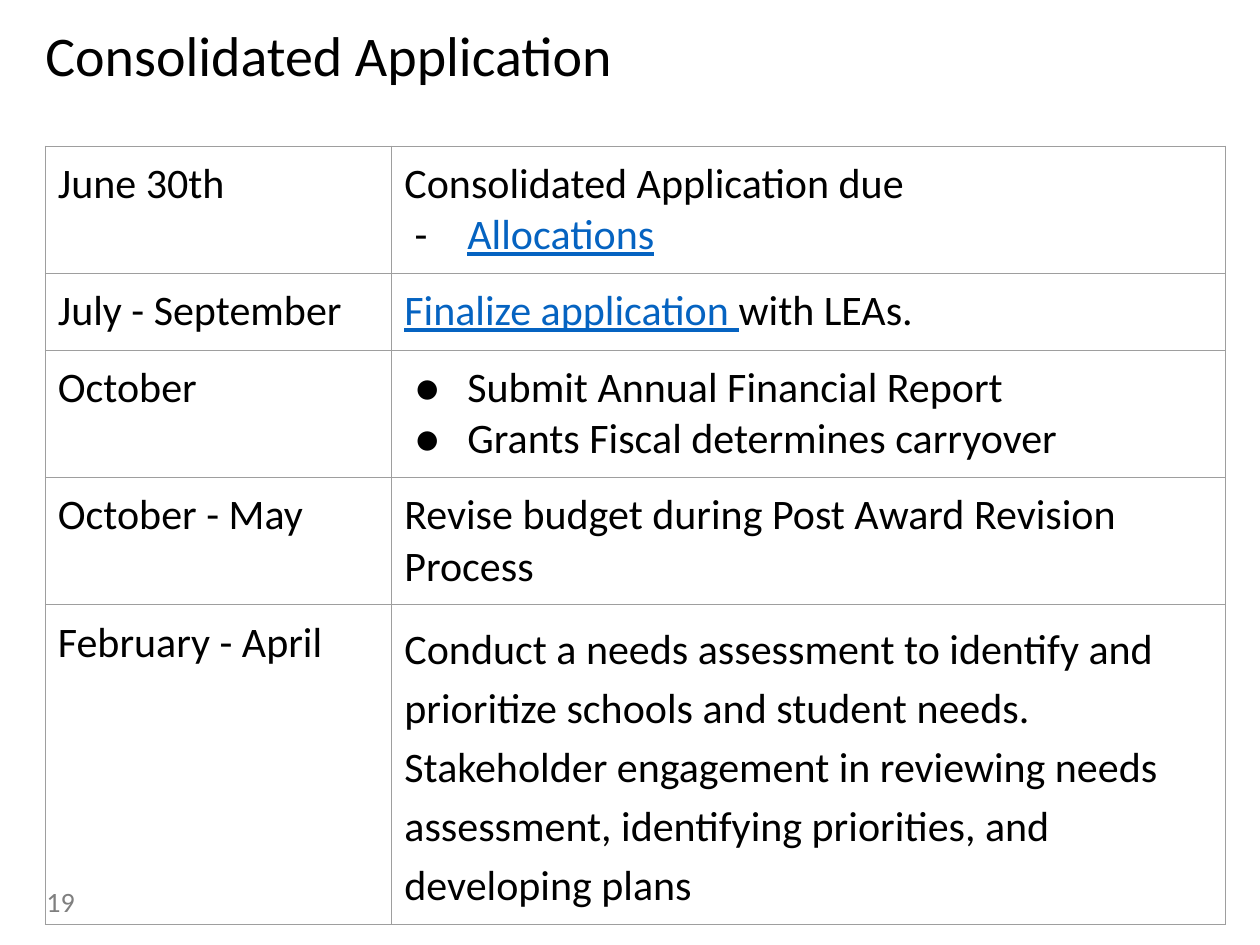
from lxml.etree import SubElement
from pptx import Presentation
from pptx.dml.color import RGBColor
from pptx.enum.text import MSO_ANCHOR, MSO_AUTO_SIZE, PP_ALIGN
from pptx.oxml import parse_xml
from pptx.oxml.ns import nsdecls, qn
from pptx.util import Inches, Pt

HUES = {"ink": "000000", "link": "0563C1", "page": "7F7F7F", "rule": "9E9E9E"}
FACE = "Calibri"
COLS = [2.75, 6.62]
# Each row: height, date, paragraphs as (bullet, line spacing, runs as (text, hue))
ROWS = [
    (1.01, "June 30th", [
        (None, None, [("Consolidated Application due", "ink")]),
        ("-", None, [("Allocations", "link")])]),
    (0.61, "July - September", [
        (None, None, [("Finalize application ", "link"), ("with LEAs.", "ink")])]),
    (1.01, "October", [
        ("●", None, [("Submit Annual Financial Report", "ink")]),
        ("●", None, [("Grants Fiscal determines carryover", "ink")])]),
    (1.01, "October - May", [
        (None, None, [("Revise budget during Post Award Revision Process", "ink")])]),
    (2.54, "February - April", [
        (None, 1.15, [("Conduct a needs assessment to identify and prioritize schools "
                       "and student needs. Stakeholder engagement in reviewing needs "
                       "assessment, identifying priorities, and developing plans", "ink")])]),
]


def style(run, size, hue):
    font = run.font
    font.name, font.size = FACE, Pt(size)
    font.color.rgb = RGBColor.from_string(HUES[hue])
    if hue == "link":
        font.underline = True


def pad(frame, x, y):
    frame.margin_left = frame.margin_right = Inches(x)
    frame.margin_top = frame.margin_bottom = Inches(y)


def add_title(slide, box):
    title = slide.shapes.title
    title.left, title.top, title.width, title.height = map(Inches, box)
    frame = title.text_frame
    frame.text = "Consolidated Application"
    frame.auto_size = MSO_AUTO_SIZE.NONE
    frame.vertical_anchor = MSO_ANCHOR.TOP
    pad(frame, 0, 0)
    para = frame.paragraphs[0]
    para.alignment, para.line_spacing = PP_ALIGN.LEFT, 0.9
    style(para.runs[0], 32, "ink")


def add_page(slide, box):
    frame = slide.shapes.add_textbox(*map(Inches, box)).text_frame
    frame.text = "19"
    frame.word_wrap = True
    frame.vertical_anchor = MSO_ANCHOR.MIDDLE
    pad(frame, 0.1, 0.05)
    style(frame.paragraphs[0].runs[0], 16, "page")


def add_mark(para, mark):
    """Give the paragraph a bullet and a hanging indent."""
    props = para._p.get_or_add_pPr()
    props.set("marL", str(Inches(0.5)))
    props.set("indent", str(Inches(-0.42)))
    hue = SubElement(props, qn("a:buClr"))
    SubElement(hue, qn("a:srgbClr"), val=HUES["ink"])
    SubElement(props, qn("a:buFont"), typeface=FACE)
    SubElement(props, qn("a:buChar"), char=mark)


def add_rules(cell):
    """Draw a thin line on all four sides of the cell."""
    props = cell._tc.get_or_add_tcPr()
    for spot, side in enumerate("LRTB"):
        props.insert(spot, parse_xml(
            f'<a:ln{side} {nsdecls("a")} w="{Pt(0.75)}"><a:solidFill>'
            f'<a:srgbClr val="{HUES["rule"]}"/></a:solidFill></a:ln{side}>'))


def fill_cell(cell, paras):
    cell.fill.background()
    pad(cell, 0.1, 0.1)
    add_rules(cell)
    frame = cell.text_frame
    for spot, (mark, gap, runs) in enumerate(paras):
        para = frame.add_paragraph() if spot else frame.paragraphs[0]
        if gap:
            para.line_spacing = gap
        if mark:
            add_mark(para, mark)
        for text, hue in runs:
            run = para.add_run()
            run.text = text
            style(run, 24, hue)


def add_dates(slide, left, top):
    high = sum(row[0] for row in ROWS)
    box = map(Inches, (left, top, sum(COLS), high))
    table = slide.shapes.add_table(len(ROWS), len(COLS), *box).table
    table.first_row = table.horz_banding = False
    for col, width in zip(table.columns, COLS):
        col.width = Inches(width)
    for row, (height, date, paras) in zip(table.rows, ROWS):
        row.height = Inches(height)
        fill_cell(row.cells[0], [(None, None, [(date, "ink")])])
        fill_cell(row.cells[1], paras)


def main():
    deck = Presentation()
    deck.slide_width, deck.slide_height = Inches(10), Inches(7.5)
    slide = deck.slides.add_slide(deck.slide_layouts[5])
    add_title(slide, (0.36, 0.22, 6.62, 0.98))
    add_page(slide, (0.27, 6.95, 2.25, 0.4))
    add_dates(slide, 0.36, 1.16)
    deck.save("out.pptx")


if __name__ == "__main__":
    main()
